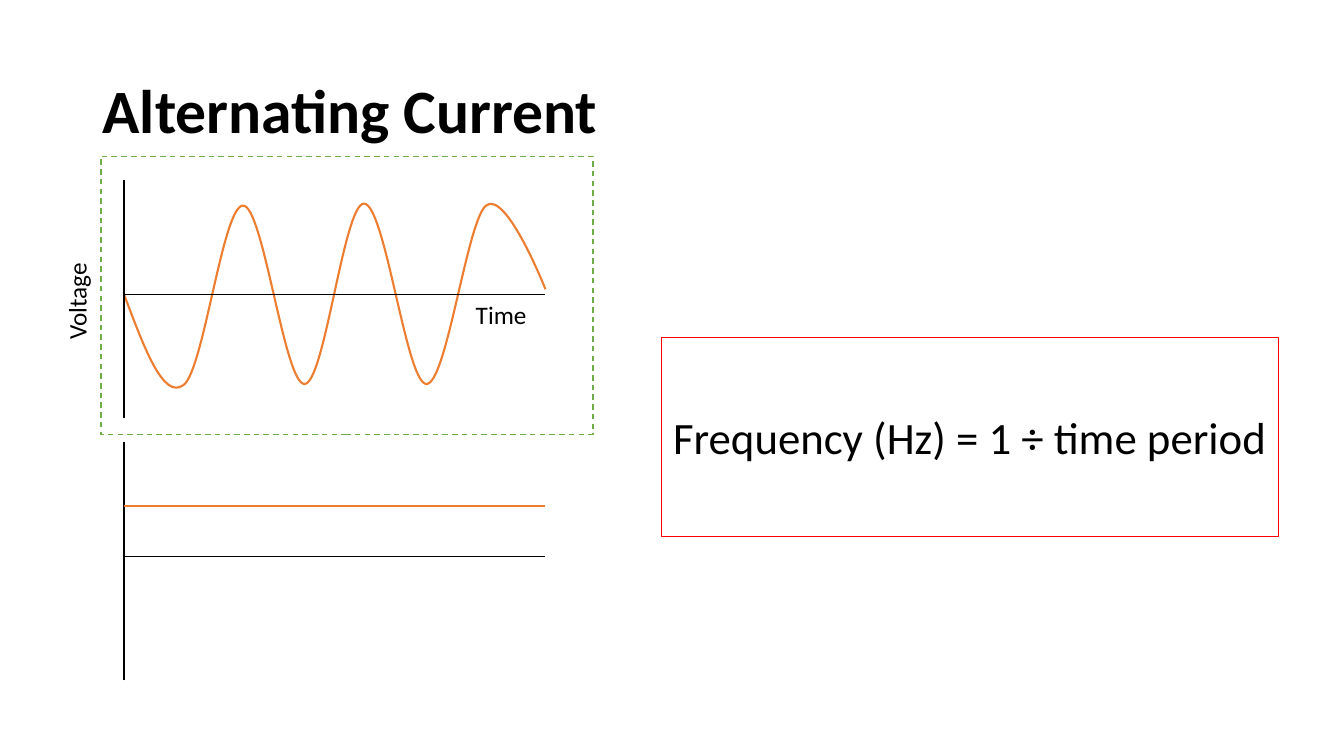
from dataclasses import dataclass

from lxml import etree
from pptx import Presentation
from pptx.dml.color import RGBColor
from pptx.enum import dml, shapes, text
from pptx.oxml import ns
from pptx.util import Inches, Pt


@dataclass(frozen=True)
class Theme:
    font: str = "Calibri"
    ink: str = "000000"
    signal: str = "ED7D31"
    graph_frame: str = "70AD47"
    formula_frame: str = "FF0000"
    title_size: int = 44
    formula_size: int = 32
    label_size: int = 18
    axis_width: float = 1
    signal_width: float = 1.5
    formula_width: float = 0.75


THEME = Theme()
AXIS_LEFT, AXIS_RIGHT = 1.23, 5.41
AXIS_HEIGHT = 2.36
WAVE_START = (AXIS_LEFT, 2.92)
WAVE_CURVES = [
    ((1.43, 3.45), (1.62, 3.97), (1.82, 3.82)),
    ((2.02, 3.68), (2.21, 2.04), (2.41, 2.04)),
    ((2.61, 2.03), (2.82, 3.81), (3.02, 3.81)),
    ((3.22, 3.81), (3.41, 2.02), (3.61, 2.02)),
    ((3.82, 2.02), (4.03, 3.81), (4.23, 3.81)),
    ((4.43, 3.81), (4.63, 2.2), (4.82, 2.04)),
    ((5.02, 1.88), (5.41, 2.87), (AXIS_RIGHT, 2.87)),
]


def style_line(line, color, width):
    line.color.rgb = RGBColor.from_string(color)
    line.width = Pt(width)


def write(frame, words, *, size, bold=False, align=text.PP_ALIGN.LEFT,
          anchor=text.MSO_ANCHOR.TOP, spacing=1.0,
          fit=text.MSO_AUTO_SIZE.NONE):
    frame.word_wrap = True
    frame.auto_size = fit
    frame.vertical_anchor = anchor
    paragraph = frame.paragraphs[0]
    paragraph.alignment = align
    paragraph.line_spacing = spacing
    run = paragraph.add_run()
    run.text = words
    run.font.name = THEME.font
    run.font.size = Pt(size)
    run.font.bold = bold
    run.font.color.rgb = RGBColor.from_string(THEME.ink)


def add_label(slide, words, box, rotation=0, **style):
    label = slide.shapes.add_textbox(*map(Inches, box))
    label.rotation = rotation
    write(label.text_frame, words, **style)


def add_frame(slide, box, color, width):
    frame = slide.shapes.add_shape(shapes.MSO_SHAPE.RECTANGLE, *map(Inches, box))
    frame.shadow.inherit = False
    frame.fill.background()
    style_line(frame.line, color, width)
    return frame


def add_line(slide, start, end, color=THEME.ink, width=THEME.axis_width):
    line = slide.shapes.add_connector(
        shapes.MSO_CONNECTOR.STRAIGHT, *map(Inches, start + end))
    style_line(line.line, color, width)
    etree.SubElement(line._element.spPr, ns.qn("a:effectLst"))


def add_axes(slide, top, time_level):
    add_line(slide, (AXIS_LEFT, time_level), (AXIS_RIGHT, time_level))
    add_line(slide, (AXIS_LEFT, top + AXIS_HEIGHT), (AXIS_LEFT, top))


def add_wave(slide):
    outline = slide.shapes.build_freeform(*map(Inches, WAVE_START))
    outline.add_line_segments(
        [tuple(map(Inches, curve[-1])) for curve in WAVE_CURVES], close=False)
    wave = outline.convert_to_shape()
    segments = list(wave._element.iter(ns.qn("a:lnTo")))
    for segment, curve in zip(segments, WAVE_CURVES):
        bend = etree.Element(ns.qn("a:cubicBezTo"))
        for x, y in curve:
            etree.SubElement(bend, ns.qn("a:pt"),
                             x=str(Inches(x) - wave.left),
                             y=str(Inches(y) - wave.top))
        segment.getparent().replace(segment, bend)
    wave.shadow.inherit = False
    wave.fill.background()
    style_line(wave.line, THEME.signal, THEME.signal_width)


def main():
    deck = Presentation()
    deck.slide_width, deck.slide_height = Inches(13.33), Inches(7.5)
    slide = deck.slides.add_slide(deck.slide_layouts[6])

    add_label(slide, "Alternating Current", (0.92, 0.4, 11.5, 1.45),
              size=THEME.title_size, bold=True,
              anchor=text.MSO_ANCHOR.MIDDLE, spacing=0.9)

    add_wave(slide)
    add_axes(slide, top=1.79, time_level=2.92)
    add_axes(slide, top=4.39, time_level=5.52)
    add_line(slide, (AXIS_LEFT, 5.02), (AXIS_RIGHT, 5.02),
             THEME.signal, THEME.signal_width)

    graph_frame = add_frame(slide, (1, 1.55, 4.88, 2.76),
                            THEME.graph_frame, THEME.axis_width)
    graph_frame.line.dash_style = dml.MSO_LINE.DASH

    formula = add_frame(slide, (6.56, 3.35, 6.12, 1.97),
                        THEME.formula_frame, THEME.formula_width)
    write(formula.text_frame, "Frequency (Hz) = 1 ÷ time period",
          size=THEME.formula_size, align=text.PP_ALIGN.CENTER,
          anchor=text.MSO_ANCHOR.MIDDLE)

    label_style = dict(size=THEME.label_size,
                       fit=text.MSO_AUTO_SIZE.SHAPE_TO_FIT_TEXT)
    add_label(slide, "Voltage", (0.17, 2.68, 1.18, 0.4), rotation=270,
              **label_style)
    add_label(slide, "Time", (4.62, 2.92, 1.18, 0.4), **label_style)

    deck.save("out.pptx")


if __name__ == "__main__":
    main()
